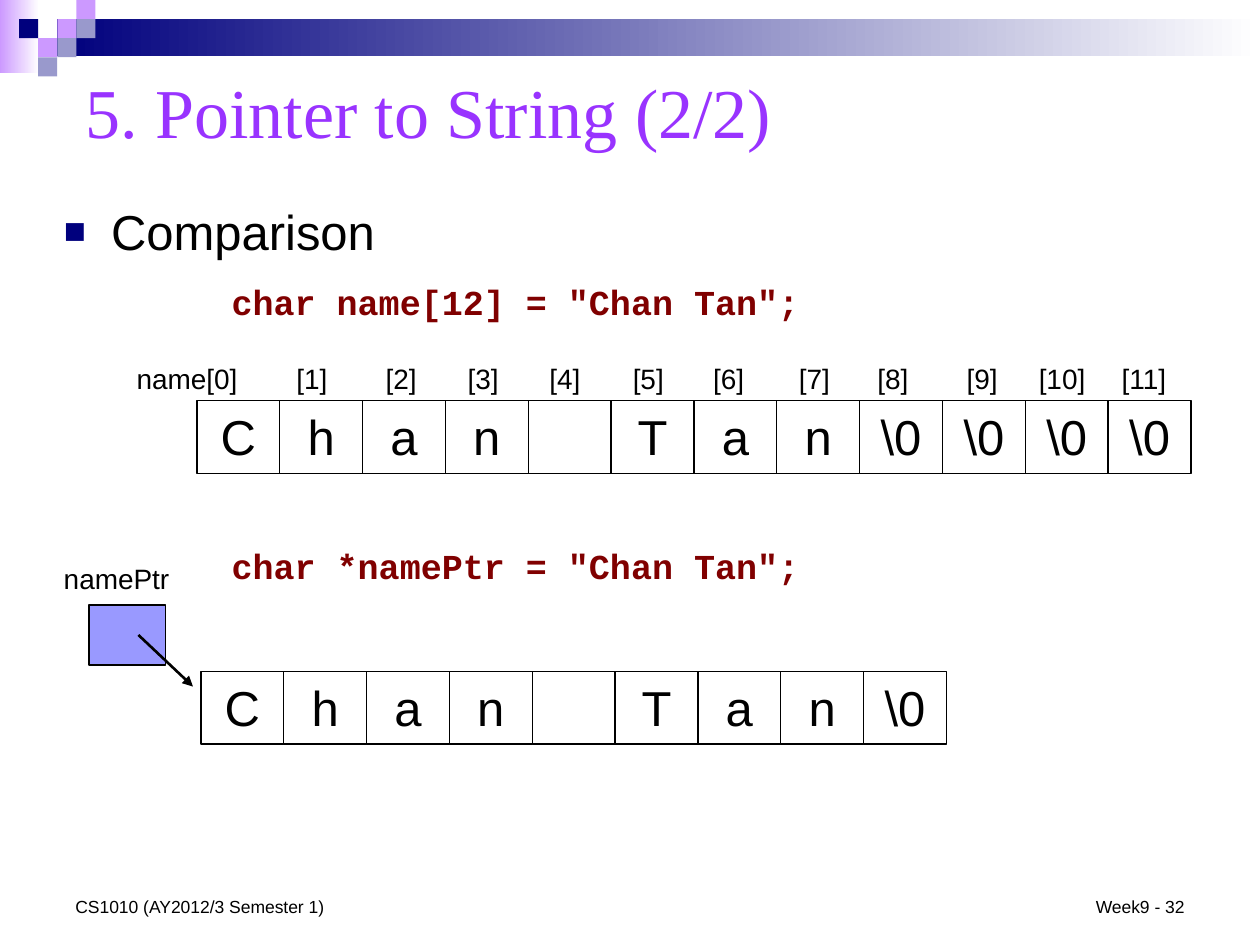
import pptx
import pptx.dml.color
import pptx.enum.shapes
import pptx.enum.text
import pptx.oxml
import pptx.oxml.ns
import pptx.util
from pptx.util import Cm

ALIGN = pptx.enum.text.PP_ALIGN
ANCHOR = pptx.enum.text.MSO_ANCHOR
RECTANGLE = pptx.enum.shapes.MSO_SHAPE.RECTANGLE
NS = pptx.oxml.ns.nsdecls("a")


def rgb(value):
    return pptx.dml.color.RGBColor.from_string(value)


def write(box, text, size, font="Arial", color="000000", bold=False,
          align=ALIGN.LEFT, anchor=ANCHOR.TOP):
    """Put one formatted run into the first paragraph of a shape."""
    frame = box.text_frame
    frame.word_wrap = True
    frame.auto_size = pptx.enum.text.MSO_AUTO_SIZE.NONE
    frame.vertical_anchor = anchor
    para = frame.paragraphs[0]
    para.alignment = align
    span = para.add_run()
    span.text = text
    span.font.size = pptx.util.Pt(size)
    span.font.name = font
    span.font.bold = bold
    span.font.color.rgb = rgb(color)
    return para


deck = pptx.Presentation()
deck.slide_width, deck.slide_height = Cm(25.4), Cm(19.05)
page = deck.slides.add_slide(deck.slide_layouts[5])
shapes = page.shapes

# Banner: two gradient bars and a scatter of small squares
for left, top, width, height, start in [
    (0, 0, 0.79, 1.48, "CC99FF"),
    (1.14, 0.38, 24.26, 0.75, "00007D"),
]:
    bar = shapes.add_shape(RECTANGLE, Cm(left), Cm(top), Cm(width), Cm(height))
    bar.shadow.inherit = False
    bar.line.fill.background()
    bar.fill.gradient()
    bar.fill.gradient_angle = 0
    for stop, color in zip(bar.fill.gradient_stops, (start, "FFFFFF")):
        stop.color.rgb = rgb(color)

SQUARE = 0.385
for column, row, color in [
    (3, 1, "CC99FF"), (4, 0, "CC99FF"), (4, 1, "9999CC"), (2, 2, "CC99FF"),
    (1, 1, "00007D"), (3, 2, "9999CC"), (2, 3, "9999CC"),
]:
    square = shapes.add_shape(RECTANGLE, Cm(column * SQUARE), Cm(row * SQUARE),
                              Cm(SQUARE), Cm(SQUARE))
    square.shadow.inherit = False
    square.fill.solid()
    square.fill.fore_color.rgb = rgb(color)
    square.line.fill.background()

# Title and bullet
title = shapes.title
title.left, title.top, title.width, title.height = Cm(1.47), Cm(1.14), Cm(22.66), Cm(2.16)
write(title, "5. Pointer to String (2/2)", 40, "Times New Roman", "9933FF",
      anchor=ANCHOR.MIDDLE)

bullet_box = shapes.add_textbox(Cm(1.04), Cm(3.94), Cm(22.91), Cm(1.42))
para = write(bullet_box, "Comparison", 28)
para.space_before = pptx.util.Pt(5.6)
properties = para._p.get_or_add_pPr()
properties.set("marL", str(Cm(0.95)))
properties.set("indent", str(Cm(-0.95)))
for xml in (f'<a:buClr {NS}><a:srgbClr val="00007D"/></a:buClr>',
            f'<a:buSzPct {NS} val="75000"/>',
            f'<a:buFont {NS} typeface="Arial"/>',
            f'<a:buChar {NS} char="■"/>'):
    properties.append(pptx.oxml.parse_xml(xml))

# Declarations
for top, code in [(5.54, 'char name[12] = "Chan Tan";'),
                  (10.85, 'char *namePtr = "Chan Tan";')]:
    code_box = shapes.add_shape(RECTANGLE, Cm(4.42), Cm(top), Cm(13.51), Cm(1.12))
    code_box.shadow.inherit = False
    code_box.fill.solid()
    code_box.fill.fore_color.rgb = rgb("FFFFFF")
    code_box.line.fill.background()
    write(code_box, code, 20, "Courier New", "800000", bold=True)

# Memory cells of the array and of the string literal
CELL = 1.67
letters = [*"Chan Tan"]
for left, top, contents in [(3.97, 8.08, letters + ["\\0"] * 4),
                            (4.05, 13.54, letters + ["\\0"])]:
    for index, content in enumerate(contents):
        cell = shapes.add_shape(RECTANGLE, Cm(left + index * CELL), Cm(top),
                                Cm(CELL), Cm(1.46))
        cell.shadow.inherit = False
        cell.fill.background()
        cell.line.color.rgb = rgb("000000")
        cell.line.width = pptx.util.Pt(0.75)
        if content != " ":
            write(cell, content, 28, align=ALIGN.CENTER)

# Index labels, placed by their centres, and the pointer's name
centres = [3.77, 6.29, 8.09, 9.74, 11.39, 13.07, 14.69, 16.42, 18, 19.8, 21.41, 23.06]
labels = [(f"[{index}]" if index else "name[0]", centre, 7.16)
          for index, centre in enumerate(centres)]
labels.append(("namePtr", 2.35, 11.2))
for text, centre, top in labels:
    width = 2.8 if text.startswith("name") else 1.58
    label = shapes.add_textbox(Cm(centre - width / 2), Cm(top), Cm(width), Cm(0.94))
    write(label, text, 16, align=ALIGN.CENTER)

# Pointer variable and its arrow
pointer = shapes.add_shape(RECTANGLE, Cm(1.8), Cm(12.19), Cm(1.54), Cm(1.22))
pointer.shadow.inherit = False
pointer.fill.solid()
pointer.fill.fore_color.rgb = rgb("9999FF")
pointer.line.color.rgb = rgb("000000")
pointer.line.width = pptx.util.Pt(1)

arrow = shapes.add_connector(pptx.enum.shapes.MSO_CONNECTOR.STRAIGHT,
                             Cm(2.79), Cm(12.8), Cm(3.89), Cm(13.84))
arrow.line.color.rgb = rgb("000000")
arrow.line.width = pptx.util.Pt(1.5)
arrow.line._get_or_add_ln().append(
    pptx.oxml.parse_xml(f'<a:tailEnd {NS} type="triangle"/>'))
arrow._element.spPr.append(pptx.oxml.parse_xml(f"<a:effectLst {NS}/>"))

# Footer
for left, width, text, align in [
    (18.21, 5.92, "Week9 - 32", ALIGN.RIGHT),
    (1.27, 8.05, "CS1010 (AY2012/3 Semester 1)", ALIGN.LEFT),
]:
    footer = shapes.add_textbox(Cm(left), Cm(17.35), Cm(width), Cm(1.27))
    write(footer, text, 10, align=align, anchor=ANCHOR.BOTTOM)

deck.save("out.pptx")
